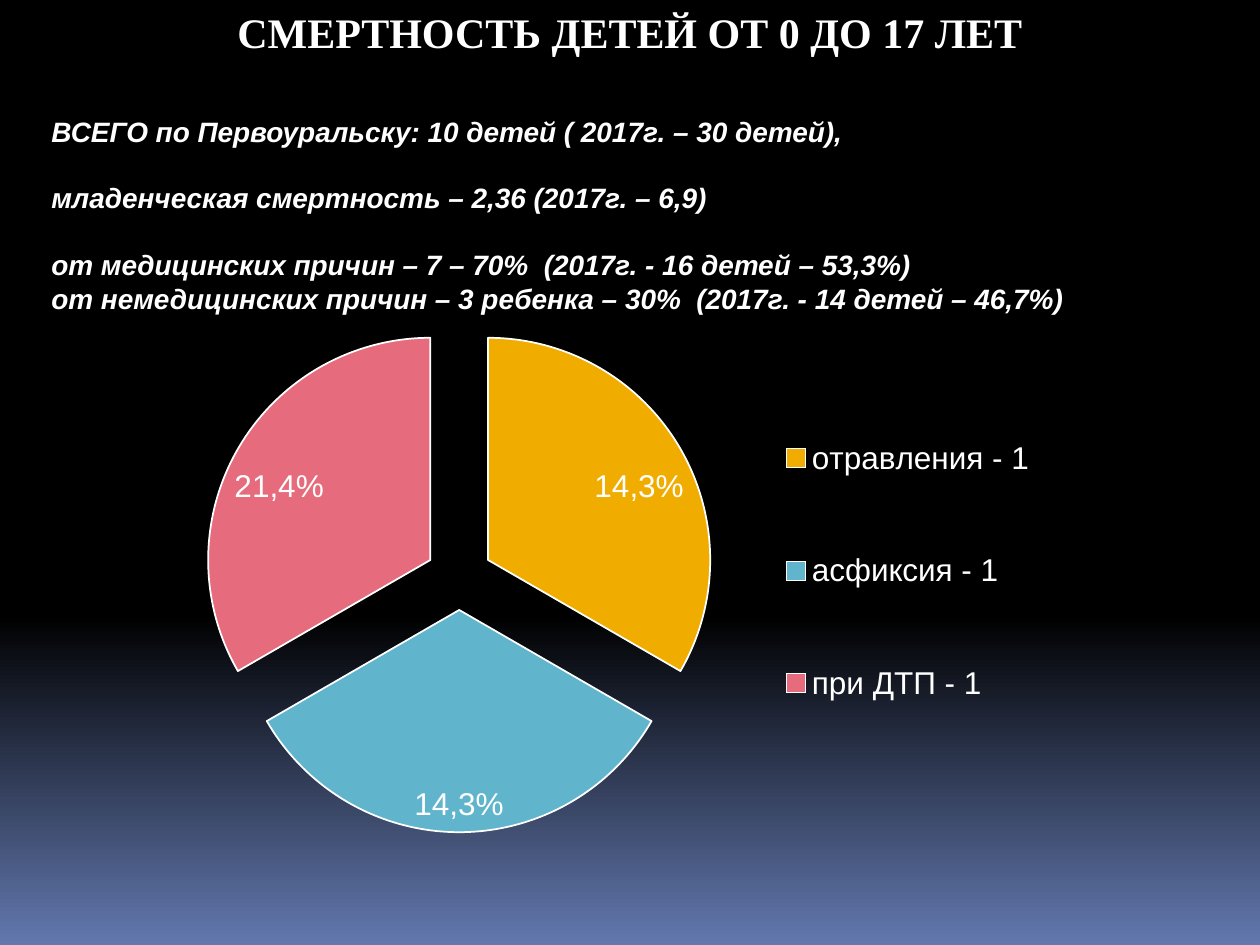
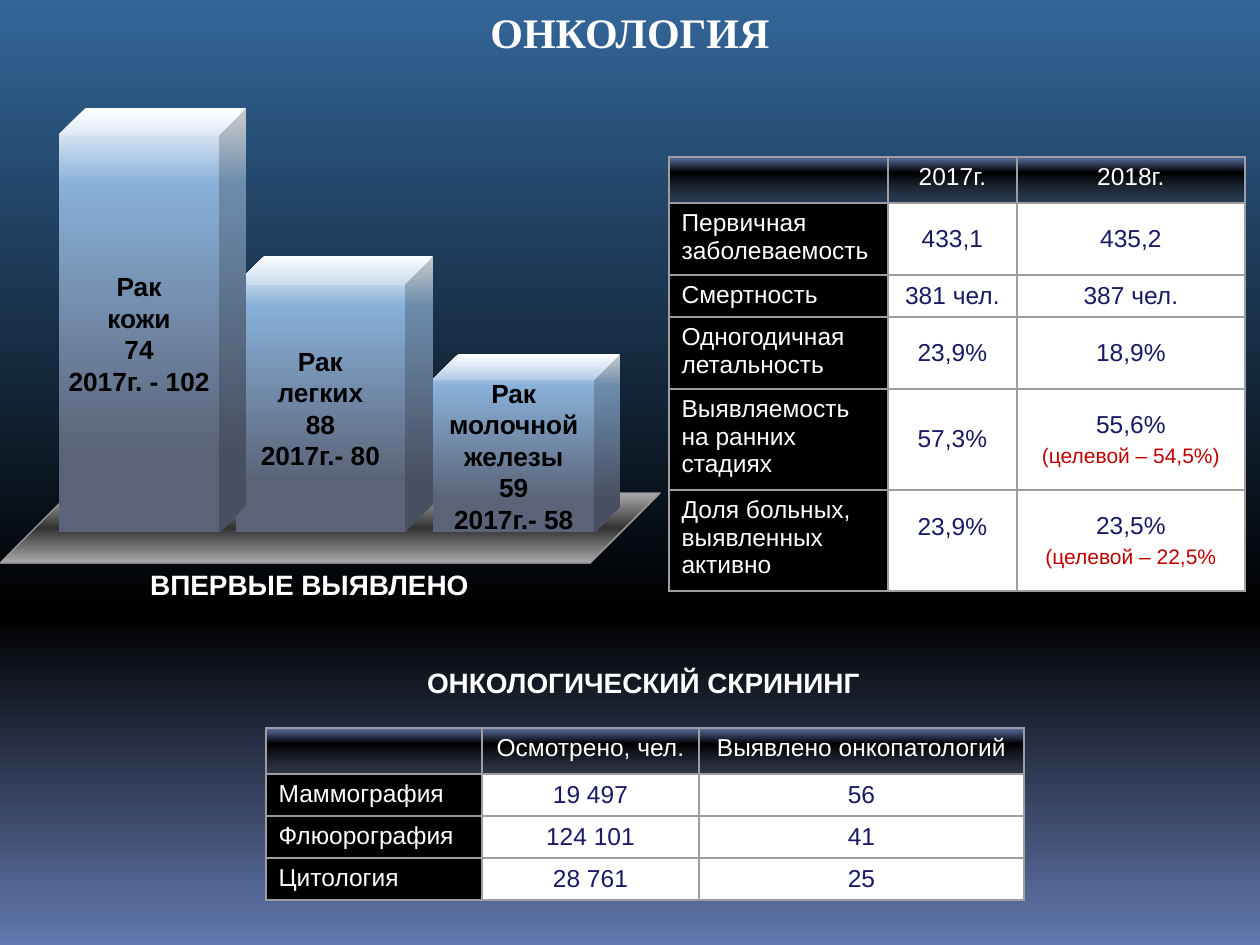
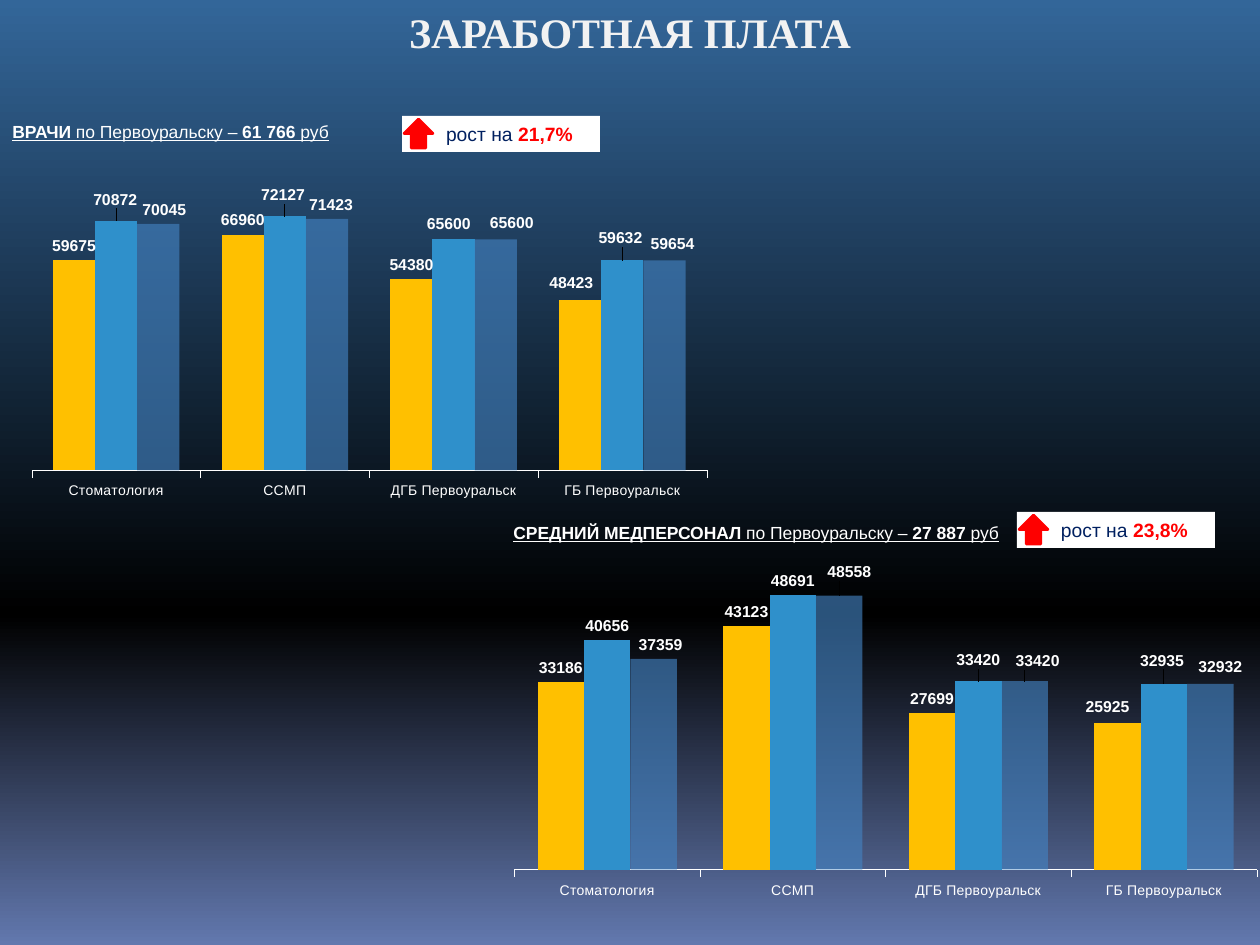
from typing import Any, NamedTuple

from lxml.etree import SubElement
from pptx import Presentation
from pptx.chart.data import CategoryChartData
from pptx.dml.color import RGBColor
from pptx.enum.chart import (XL_CHART_TYPE, XL_LABEL_POSITION, XL_LEGEND_POSITION,
                             XL_TICK_LABEL_POSITION, XL_TICK_MARK)
from pptx.enum.shapes import MSO_SHAPE
from pptx.enum.text import MSO_ANCHOR, PP_ALIGN
from pptx.oxml.ns import qn
from pptx.util import Emu, Pt

SCALE = 914400 / 126
WHITE, BLACK, RED, INK = "FFFFFF", "000000", "FF0000", "191965"
HEAD = {"name": "Times New Roman", "size": Pt(24), "bold": True}
LEAD = {"name": "Arial", "size": Pt(16), "bold": True}
FACT = LEAD | {"italic": True}
BODY = {"name": "Arial", "size": Pt(14), "bold": False}
NOTE = BODY | {"size": Pt(12)}
BAR = LEAD | {"size": Pt(15)}
LINK = {"name": "Arial", "size": Pt(10), "bold": False, "underline": True}
RISE = {"name": "Arial", "size": Pt(11), "bold": False}
MARK = {"name": "Arial", "size": Pt(9), "bold": True}
AXIS = {"name": "Arial", "size": Pt(8), "bold": False}
PIE = {"name": "Arial", "size": Pt(18), "bold": False}
OUT = XL_LABEL_POSITION.OUTSIDE_END
EXT = "http://schemas.microsoft.com/office/drawing/2012/chart"
UNITS = ["Стоматология", "ССМП", "ДГБ Первоуральск", "ГБ Первоуральск"]


class Stop(NamedTuple):
    """One gradient stop in percent."""
    at: int
    color: str
    alpha: int = 100


class Box(NamedTuple):
    """A frame in px."""
    x: int
    y: int
    w: int
    h: int


class Run(NamedTuple):
    """A piece of text in one format."""
    text: str
    fmt: dict[str, Any]
    color: str = WHITE


class Para(NamedTuple):
    """A paragraph and the space above it in points."""
    runs: list[Run]
    gap: int = 0


class Cube(NamedTuple):
    """A labelled block of the cancer figure."""
    box: Box
    lines: list[str]


class Grid(NamedTuple):
    """A table with its sizes in px."""
    x: int
    y: int
    cols: list[int]
    rows: list[int]
    cells: list[list[str]]


class Set(NamedTuple):
    """A column series with label shifts in px by point."""
    color: str
    alpha: int
    vals: list[int]
    shifts: dict[int, tuple[int, int]]


class Pay(NamedTuple):
    """A block on wages: chart, caption and growth badge."""
    box: Box
    depth: float
    top: int
    sets: list[Set]
    text: Box
    group: str
    sum: str
    badge: Box
    growth: str


NIGHT = [Stop(0, BLACK), Stop(65, BLACK), Stop(100, "6278AE")]
DUSK = [Stop(0, "336699"), *NIGHT[1:]]
CROWN = [Stop(9, "2D313C", 55), *NIGHT[1:]]
GLASS = [Stop(0, WHITE), Stop(18, "88B0D8"), Stop(82, "5A6378")]
FLOOR = [Stop(0, BLACK), Stop(100, "969696")]

CUBES = [
    Cube(Box(433, 354, 187, 178), ["Рак", "молочной железы", "59", "2017г.- 58"]),
    Cube(Box(236, 256, 197, 276), ["Рак", "легких", "88", "2017г.- 80"]),
    Cube(Box(59, 108, 187, 424), ["Рак", "кожи", "74", "2017г. - 102"]),
]
RATES = Grid(669, 157, [219, 129, 228], [46, 72, 42, 72, 100, 101], [
    ["", "2017г.", "2018г."],
    ["Первичная заболеваемость", "433,1", "435,2"],
    ["Смертность", "381 чел.", "387 чел."],
    ["Одногодичная летальность", "23,9%", "18,9%"],
    ["Выявляемость на ранних стадиях", "57,3%", "55,6%\n(целевой – 54,5%)"],
    ["Доля больных, выявленных активно", "23,9%", "23,5%\n(целевой – 22,5%"],
])
SCREEN = Grid(266, 728, [216, 217, 325], [46, 42, 42, 42], [
    ["", "Осмотрено, чел.", "Выявлено онкопатологий"],
    ["Маммография", "19 497", "56"],
    ["Флюорография", "124 101", "41"],
    ["Цитология", "28 761", "25"],
])
PAYS = [
    Pay(Box(25, 136, 682, 446), 0.75, 95000, [
        Set("FFC000", 100, [59675, 66960, 54380, 48423], {3: (-9, -3)}),
        Set("2F90CB", 100, [70872, 72127, 65600, 59632],
            {0: (-1, -7), 1: (-2, -7), 2: (-5, -1), 3: (-2, -8)}),
        Set("4382C1", 64, [70045, 71423, 65600, 59654],
            {0: (6, 1), 1: (4, 0), 2: (16, -2), 3: (8, -2)}),
    ], Box(0, 115, 372, 34), "ВРАЧИ", "61 766 ", Box(402, 116, 198, 36), "21,7%"),
    Pay(Box(507, 503, 750, 442), 0.83, 65000, [
        Set("FFC000", 100, [33186, 43123, 27699, 25925], {3: (-10, -2)}),
        Set("2F90CB", 100, [40656, 48691, 33420, 32935], {2: (0, -7), 3: (-2, -9)}),
        Set("4382C1", 64, [37359, 48558, 33420, 32932],
            {0: (7, 0), 1: (10, -9), 2: (13, -6), 3: (10, -3)}),
    ], Box(501, 516, 759, 34), "СРЕДНИЙ МЕДПЕРСОНАЛ", "27 887 ",
        Box(1017, 512, 198, 36), "23,8%"),
]


def px(n: int) -> Emu:
    """Turn px into EMU."""
    return Emu(round(n * SCALE))


def hue(code: str) -> RGBColor:
    """Turn a hex string into a colour."""
    return RGBColor.from_string(code)


def style(item: Any, fmt: dict[str, Any]) -> None:
    """Set each format value on an item."""
    for key, val in fmt.items():
        setattr(item, key, val)


def ink(font: Any, fmt: dict[str, Any], color: str = WHITE) -> None:
    """Format a font and colour it."""
    style(font, fmt)
    font.color.rgb = hue(color)


def solid(fill: Any, color: str, alpha: int = 100) -> None:
    """Fill with one colour, see-through if asked."""
    fill.solid()
    fill.fore_color.rgb = hue(color)
    if alpha < 100:
        tag = fill._xPr.find(".//" + qn("a:srgbClr"))
        SubElement(tag, qn("a:alpha"), val=str(alpha * 1000))


def blend(fill: Any, stops: list[Stop], angle: int | None = 90) -> None:
    """Fill with a linear gradient, or one from the centre without an angle."""
    fill.gradient()
    root = fill._xPr.find(qn("a:gradFill"))
    root.clear()
    items = SubElement(root, qn("a:gsLst"))
    for stop in stops:
        node = SubElement(items, qn("a:gs"), pos=str(stop.at * 1000))
        tag = SubElement(node, qn("a:srgbClr"), val=stop.color)
        if stop.alpha < 100:
            SubElement(tag, qn("a:alpha"), val=str(stop.alpha * 1000))
    if angle is None:
        core = SubElement(root, qn("a:path"), {"path": "rect"})
        SubElement(core, qn("a:fillToRect"), dict.fromkeys("ltrb", "50000"))
    else:
        SubElement(root, qn("a:lin"), ang=str(angle * 60000), scaled="0")


def write(frame: Any, paras: list[Para], align: PP_ALIGN = PP_ALIGN.CENTER) -> None:
    """Write paragraphs into a text frame."""
    frame.word_wrap = True
    for i, para in enumerate(paras):
        line = frame.add_paragraph() if i else frame.paragraphs[0]
        style(line, {"alignment": align, "space_before": Pt(para.gap)})
        for run in para.runs:
            part = line.add_run()
            part.text = run.text
            ink(part.font, run.fmt, run.color)
        if not para.runs:
            SubElement(line._p, qn("a:endParaRPr"), sz="1400")


def label(slide: Any, box: Box, paras: list[Para],
          align: PP_ALIGN = PP_ALIGN.CENTER) -> None:
    """Add a text box."""
    write(slide.shapes.add_textbox(*map(px, box)).text_frame, paras, align)


def block(slide: Any, kind: MSO_SHAPE, box: Box) -> Any:
    """Add a shape without shadow or line."""
    shape = slide.shapes.add_shape(kind, *map(px, box))
    shape.shadow.inherit = False
    shape.line.fill.background()
    return shape


def edge(line: Any, color: str, width: float) -> None:
    """Colour a line and set its width."""
    line.color.rgb = hue(color)
    line.width = Pt(width)


def page(deck: Any, title: str, stops: list[Stop], color: str = WHITE) -> Any:
    """Add a slide with its background and title."""
    slide = deck.slides.add_slide(deck.slide_layouts[6])
    blend(slide.background.fill, stops)
    label(slide, Box(0, 0, 1260, 108), [Para([Run(title, HEAD, color)])])
    return slide


def place(root: Any, index: int, spots: dict[str, float], inner: bool = False) -> None:
    """Give a chart part a manual layout."""
    for old in root.findall(qn("c:layout")):
        root.remove(old)
    node = SubElement(root, qn("c:layout"))
    root.insert(index, node)
    hand = SubElement(node, qn("c:manualLayout"))
    if inner:
        SubElement(hand, qn("c:layoutTarget"), val="inner")
    if "w" in spots:
        for mode in ("xMode", "yMode"):
            SubElement(hand, qn("c:" + mode), val="edge")
    for key, val in spots.items():
        SubElement(hand, qn("c:" + key), val=f"{val:.4f}")


def graph(slide: Any, kind: XL_CHART_TYPE, box: Box, cats: list[str],
          rows: list[list[int]], spots: dict[str, float]) -> Any:
    """Add a chart with its plot in place."""
    data = CategoryChartData()
    data.categories = cats
    for i, row in enumerate(rows, 1):
        data.add_series(f"Series {i}", row)
    chart = slide.shapes.add_chart(kind, *map(px, box), data).chart
    chart.has_title = False
    chart.has_legend = False
    ink(chart.font, PIE)
    place(chart._chartSpace.chart.plotArea, 0, spots, True)
    return chart


def pie(slide: Any) -> None:
    """Draw the pie of causes."""
    chart = graph(slide, XL_CHART_TYPE.PIE, Box(77, 304, 1086, 593),
                  ["отравления - 1", "асфиксия - 1", "при ДТП - 1"], [[33] * 3],
                  {"x": 0.116, "y": 0.029, "w": 0.472, "h": 0.862})
    chart.has_legend = True
    style(chart.legend, {"position": XL_LEGEND_POSITION.RIGHT, "include_in_layout": False})
    ink(chart.legend.font, PIE)
    place(chart.legend._element, 1, {"x": 0.64, "y": 0.1, "w": 0.25, "h": 0.7})
    row = chart.plots[0].series[0]
    edge(row.format.line, WHITE, 1)
    gap = SubElement(row._element, qn("c:explosion"), val="15")
    row._element.find(qn("c:spPr")).addnext(gap)
    parts = zip(["F0AD00", "60B5CC", "E66C7D"], ["14,3%", "14,3%", "21,4%"])
    for i, (color, text) in enumerate(parts):
        point = row.points[i]
        solid(point.format.fill, color)
        edge(point.format.line, WHITE, 1)
        tag = point.data_label
        tag.text_frame.text = text
        ink(tag.text_frame.paragraphs[0].runs[0].font, PIE)
        tag.position = XL_LABEL_POSITION.BEST_FIT


def bare(root: Any) -> None:
    """Turn off the leader lines of data labels."""
    node = SubElement(SubElement(root, qn("c:extLst")), qn("c:ext"), {
        "uri": "{CE6537A1-D6FC-4f65-9D91-7224C49458BB}"}, nsmap={"c15": EXT})
    SubElement(node, f"{{{EXT}}}showLeaderLines", val="0")


def bars(slide: Any, pay: Pay) -> None:
    """Draw the columns of one wage block."""
    chart = graph(slide, XL_CHART_TYPE.COLUMN_CLUSTERED, pay.box, UNITS,
                  [item.vals for item in pay.sets],
                  {"x": 0.01, "y": 0, "w": 0.99, "h": pay.depth})
    plot, axis = chart.plots[0], chart.category_axis
    style(plot, {"gap_width": 100, "overlap": 0, "vary_by_categories": False})
    style(chart.value_axis, {"minimum_scale": 0, "maximum_scale": pay.top,
                             "has_major_gridlines": False, "visible": False})
    style(axis, {"major_tick_mark": XL_TICK_MARK.OUTSIDE,
                 "tick_label_position": XL_TICK_LABEL_POSITION.LOW})
    ink(axis.tick_labels.font, AXIS)
    edge(axis.format.line, WHITE, 0.25)
    for row, item in zip(plot.series, pay.sets):
        row.invert_if_negative = False
        solid(row.format.fill, item.color, item.alpha)
        tags = row.data_labels
        style(tags, {"show_value": True, "position": OUT})
        ink(tags.font, MARK)
        for i, (x, y) in item.shifts.items():
            tag = row.points[i].data_label
            ink(tag.font, MARK)
            tag.position = OUT
            place(tags._element.findall(qn("c:dLbl"))[-1], 1,
                  {"x": x / pay.box.w, "y": y / pay.box.h})
        bare(tags._element)


def frame(cell: Any) -> None:
    """Draw the four borders of a cell."""
    root = cell._tc.get_or_add_tcPr()
    for i, side in enumerate(("lnL", "lnR", "lnT", "lnB")):
        line = SubElement(root, qn("a:" + side), w=str(Pt(1)))
        root.insert(i, line)
        SubElement(SubElement(line, qn("a:solidFill")), qn("a:srgbClr"), val="9D9DA2")


def table(slide: Any, grid: Grid) -> Any:
    """Draw a table with a head row and a black first column."""
    box = Box(grid.x, grid.y, sum(grid.cols), sum(grid.rows))
    body = slide.shapes.add_table(len(grid.rows), len(grid.cols), *map(px, box)).table
    for col, size in zip(body.columns, grid.cols):
        col.width = px(size)
    for r, (row, size) in enumerate(zip(grid.cells, grid.rows)):
        body.rows[r].height = px(size)
        for c, text in enumerate(row):
            cell = body.cell(r, c)
            value = r > 0 and c > 0
            if r:
                solid(cell.fill, WHITE if value else BLACK)
            else:
                blend(cell.fill, CROWN, 270)
            frame(cell)
            cell.vertical_anchor = MSO_ANCHOR.MIDDLE if value else MSO_ANCHOR.TOP
            main, *notes = text.split("\n")
            paras = [Para([Run(main, BODY, INK if value else WHITE)] if main else [])]
            paras += [Para([Run(note, NOTE, "C00000")], 3) for note in notes]
            write(cell.text_frame, paras, PP_ALIGN.CENTER if c else PP_ALIGN.LEFT)
    return body


def cube(slide: Any, item: Cube) -> None:
    """Draw a glass block with its text."""
    shape = block(slide, MSO_SHAPE.CUBE, item.box)
    shape.adjustments[0] = 0.143
    blend(shape.fill, GLASS)
    style(shape.text_frame, {"vertical_anchor": MSO_ANCHOR.MIDDLE} | dict.fromkeys(
        ("margin_left", "margin_right", "margin_top", "margin_bottom"), 0))
    write(shape.text_frame, [Para([Run(line, BAR, BLACK)]) for line in item.lines])


def badge(slide: Any, box: Box, growth: str) -> None:
    """Draw the growth badge with its arrow."""
    card = block(slide, MSO_SHAPE.RECTANGLE, box)
    solid(card.fill, WHITE)
    style(card.text_frame, {"margin_left": px(44), "margin_right": 0,
                            "vertical_anchor": MSO_ANCHOR.MIDDLE})
    write(card.text_frame, [Para([Run("рост на ", RISE, "002060"),
                                  Run(growth, RISE | {"bold": True}, RED)])], PP_ALIGN.LEFT)
    arrow = block(slide, MSO_SHAPE.UP_ARROW, Box(box.x + 2, box.y + 3, 29, 29))
    solid(arrow.fill, "FE0000")
    edge(arrow.line, RED, 1.5)


def deaths(deck: Any) -> None:
    """Build the slide on child mortality."""
    slide = page(deck, "СМЕРТНОСТЬ ДЕТЕЙ ОТ 0 ДО 17 ЛЕТ", NIGHT)
    pie(slide)
    facts = [("ВСЕГО по Первоуральску: 10 детей ( 2017г. – 30 детей),", 0),
             ("младенческая смертность – 2,36 (2017г. – 6,9)", 19),
             ("от медицинских причин – 7 – 70%  (2017г. - 16 детей – 53,3%)", 19),
             ("от немедицинских причин – 3 ребенка – 30%  (2017г. - 14 детей – 46,7%)", 0)]
    label(slide, Box(39, 108, 1162, 217),
          [Para([Run(text, FACT)], gap) for text, gap in facts], PP_ALIGN.LEFT)


def cancer(deck: Any) -> None:
    """Build the slide on cancer."""
    slide = page(deck, "ОНКОЛОГИЯ", DUSK)
    rates = table(slide, RATES)
    rates.cell(5, 1).margin_bottom = px(34)
    base = block(slide, MSO_SHAPE.CUBE, Box(0, 493, 660, 70))
    base.adjustments[0] = 1
    blend(base.fill, FLOOR, None)
    edge(base.line, "969696", 0.75)
    for item in CUBES:
        cube(slide, item)
    table(slide, SCREEN)
    for x, y, text in [(393, 659, "ОНКОЛОГИЧЕСКИЙ СКРИНИНГ"), (59, 561, "ВПЕРВЫЕ ВЫЯВЛЕНО")]:
        label(slide, Box(x, y, 501, 69), [Para([Run(text, LEAD)])])


def wages(deck: Any) -> None:
    """Build the slide on wages."""
    slide = page(deck, "ЗАРАБОТНАЯ ПЛАТА", DUSK, "F2F2F2")
    bold = LINK | {"bold": True}
    for pay in PAYS:
        bars(slide, pay)
        badge(slide, pay.badge, pay.growth)
        label(slide, pay.text, [Para([
            Run(pay.group, bold), Run(" по Первоуральску – ", LINK),
            Run(pay.sum, bold), Run("руб", LINK)])], PP_ALIGN.LEFT)


def main() -> None:
    """Build and save the deck."""
    deck = Presentation()
    style(deck, {"slide_width": px(1260), "slide_height": px(945)})
    for build in (deaths, cancer, wages):
        build(deck)
    deck.save("out.pptx")


if __name__ == "__main__":
    main()
